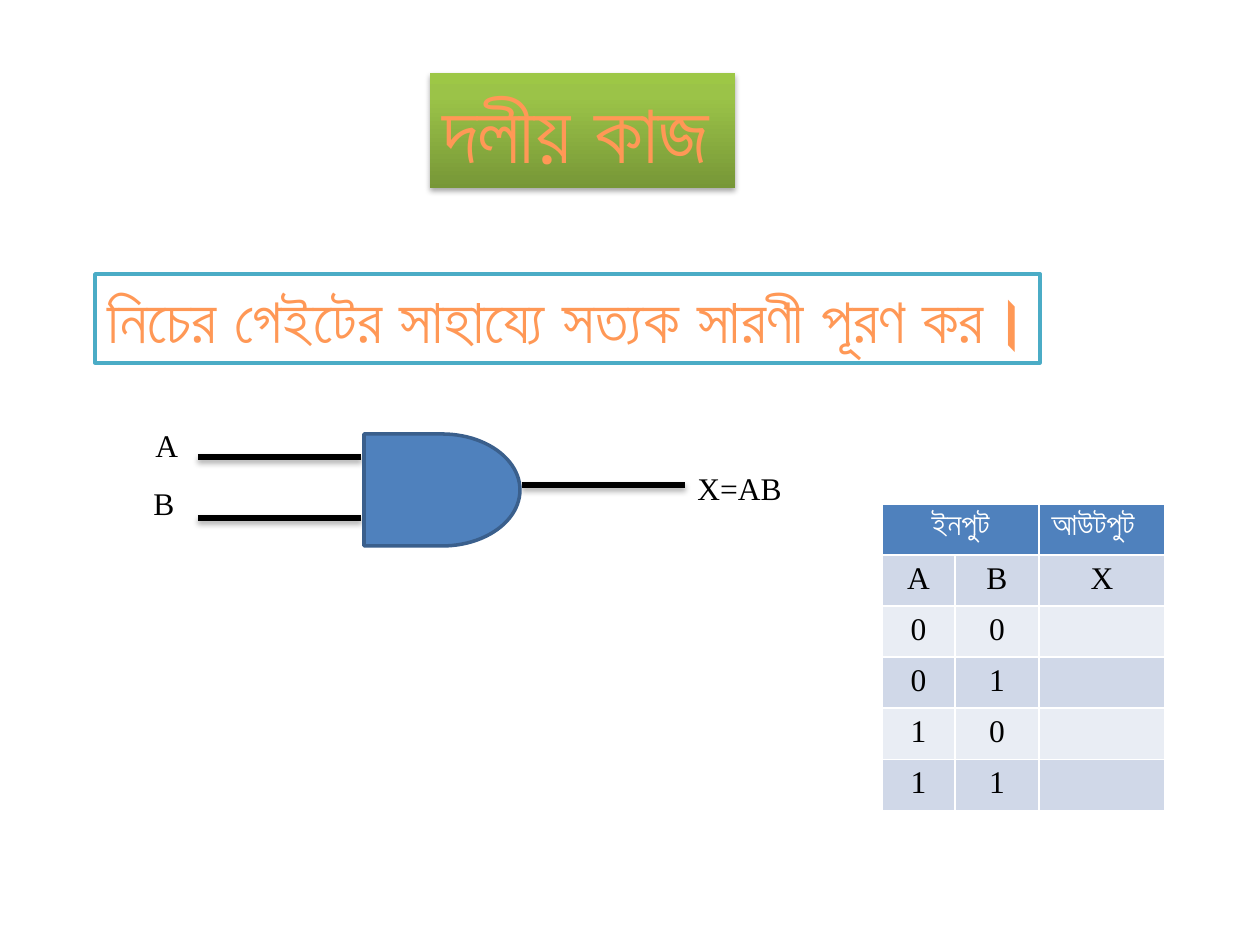
from copy import deepcopy
from lxml.etree import SubElement
from pptx import Presentation
from pptx.dml.color import RGBColor
from pptx.enum.shapes import MSO_CONNECTOR as Line, MSO_SHAPE as Shape
from pptx.enum.text import MSO_ANCHOR as Anchor, PP_ALIGN as Align
from pptx.oxml.ns import qn
from pptx.util import Emu, Pt

SCALE = 914400 / 126
SERIF = "Times New Roman"
ORANGE, BLUE, BLACK, WHITE = "FF9856", "4F81BD", "000000", "FFFFFF"
BANDS = ["D0D8E8", "E9EDF4"]


def px(n):
    return Emu(round(n * SCALE))


def area(*box):
    return [px(n) for n in box]


def rgb(code):
    return RGBColor.from_string(code)


def paint(fill, code):
    fill.solid()
    fill.fore_color.rgb = rgb(code)


def outline(line, code, width):
    line.color.rgb = rgb(code)
    line.width = Pt(width)


def write(frame, text, size, font, color, bold=False, align=Align.LEFT):
    frame.text = text
    para = frame.paragraphs[0]
    para.alignment = align
    for run in para.runs:
        face = run.font
        face.name, face.size, face.bold = font, Pt(size), bold
        face.color.rgb = rgb(color)


def shade(shape):
    """Add a soft shadow just below the shape."""
    props = shape._element.spPr
    for old in props.findall(qn("a:effectLst")):
        props.remove(old)
    effects = SubElement(props, qn("a:effectLst"))
    outer = SubElement(effects, qn("a:outerShdw"), blurRad="40000",
                       dist="23000", dir="5400000", rotWithShape="0")
    tint = SubElement(outer, qn("a:srgbClr"), val=BLACK)
    SubElement(tint, qn("a:alpha"), val="35000")


def banner(shapes, box, text, size):
    """Place a rectangle with a heading in it."""
    rect = shapes.add_shape(Shape.RECTANGLE, *area(*box))
    rect.shadow.inherit = False
    frame = rect.text_frame
    frame.word_wrap = True
    frame.vertical_anchor = Anchor.TOP
    write(frame, text, size, "Arial", ORANGE, True)
    return rect


def title(shapes, box):
    rect = banner(shapes, box, "দলীয় কাজ", 48)
    rect.line.fill.background()
    rect.fill.gradient()
    rect.fill.gradient_angle = 90
    stops = rect._element.spPr.find(".//" + qn("a:gsLst"))
    stops.append(deepcopy(stops[0]))
    ramp = [(0, "779737"), (0.8, "9BC348"), (1, "9DC746")]
    for stop, (place, code) in zip(rect.fill.gradient_stops, ramp):
        stop.position = place
        stop.color.rgb = rgb(code)
    shade(rect)


def task(shapes, box):
    rect = banner(shapes, box, "নিচের গেইটের সাহায্যে সত্যক সারণী পূরণ কর।", 36)
    paint(rect.fill, WHITE)
    outline(rect.line, "4BACC6", 2)


def label(shapes, box, text, wrap=True):
    note = shapes.add_textbox(*area(*box))
    note.text_frame.word_wrap = wrap
    write(note.text_frame, text, 18, SERIF, BLACK)


def gate(shapes, left, top):
    """Draw an AND gate with two inputs and one output."""
    group = shapes.add_group_shape().shapes
    for x, y in [(386, 65), (62, 98), (62, 37)]:
        wire = group.add_connector(Line.STRAIGHT, *area(
            left + x, top + y, left + x + 163, top + y))
        outline(wire.line, BLACK, 3)
        shade(wire)
    label(group, (left + 7, top, 65, 68), "A")
    label(group, (left + 5, top + 58, 65, 68), "B")
    body = group.add_shape(Shape.FLOWCHART_DELAY,
                           *area(left + 228, top + 14, 156, 112))
    body.shadow.inherit = False
    paint(body.fill, BLUE)
    outline(body.line, "3A5F8C", 2)
    label(shapes, (left + 549, top + 43, 111, 50), "X=AB", False)


def truth(shapes, box):
    """Place the truth table whose output is left to fill in."""
    rows = [["ইনপুট", "", "আউটপুট"], ["A", "B", "X"]]
    rows += [[a, b, ""] for a in "01" for b in "01"]
    table = shapes.add_table(len(rows), 3, *area(*box)).table
    for column, width in zip(table.columns, (73, 84, 126)):
        column.width = px(width)
    table.cell(0, 0).merge(table.cell(0, 1))
    for r, row in enumerate(rows):
        for c, text in enumerate(row):
            cell = table.cell(r, c)
            head = r == 0
            paint(cell.fill, BLUE if head else BANDS[(r - 1) % 2])
            if text:
                write(cell.text_frame, text, 18, "Arial" if head else SERIF,
                      WHITE if head else BLACK, head,
                      Align.LEFT if head and c == 2 else Align.CENTER)


def main():
    deck = Presentation()
    deck.slide_width, deck.slide_height = area(1260, 945)
    shapes = deck.slides.add_slide(deck.slide_layouts[6]).shapes
    title(shapes, (430, 73, 305, 115))
    truth(shapes, (882, 504, 283, 306))
    gate(shapes, 136, 420)
    task(shapes, (95, 274, 945, 89))
    deck.save("out.pptx")


if __name__ == "__main__":
    main()
